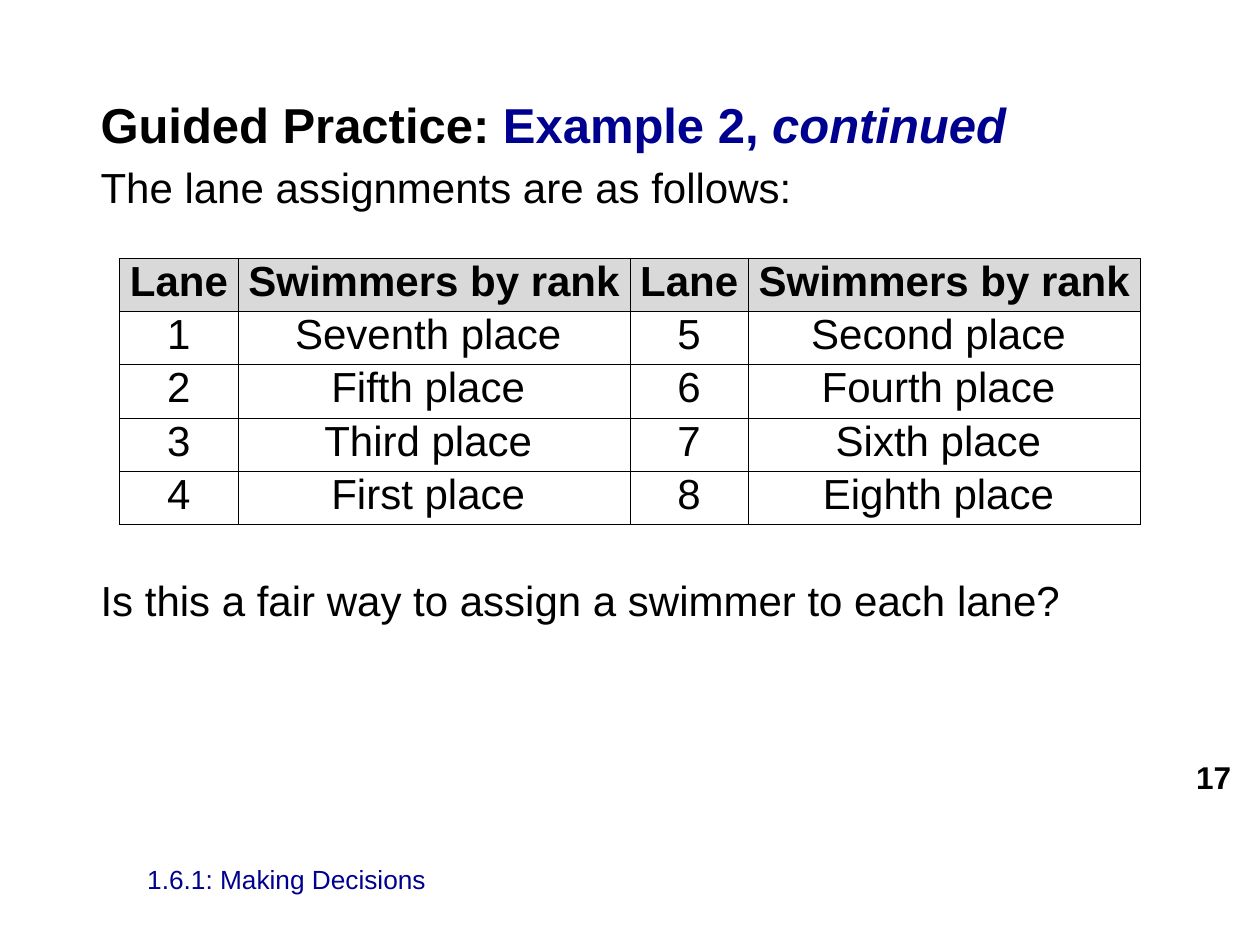
from typing import NamedTuple

from lxml.etree import SubElement
from pptx import Presentation
from pptx.dml.color import RGBColor
from pptx.enum.text import MSO_ANCHOR as Anchor, PP_ALIGN as Align
from pptx.oxml.ns import qn
from pptx.util import Inches, Pt

BLACK = RGBColor(0x00, 0x00, 0x00)
NAVY = RGBColor(0x00, 0x00, 0x90)
GRAY = RGBColor(0xD9, 0xD9, 0xD9)
WHITE = RGBColor(0xFF, 0xFF, 0xFF)
FONT = "Arial"


class Label(NamedTuple):
    text: str
    left: float
    top: float
    width: float
    height: float
    size: int
    color: RGBColor
    bold: bool
    align: Align


class BodyLine(NamedTuple):
    text: str
    space_before: float


LABELS = [
    Label("17", 9.07, 6.01, 0.8, 0.31, 18, BLACK, True, Align.RIGHT),
    Label("1.6.1: Making Decisions", 1.07, 6.83, 6.28, 0.29, 15, NAVY, False, Align.LEFT),
]
BODY_LINES = [
    BodyLine("The lane assignments are as follows:", 5),
    BodyLine("Is this a fair way to assign a swimmer to each lane?", 207),
]
HEADER = ["Lane", "Swimmers by rank"] * 2
PLACES = ["Seventh", "Fifth", "Third", "First", "Second", "Fourth", "Sixth", "Eighth"]
COLUMN_WIDTHS = [0.94, 3.11] * 2
ROW_HEIGHT = 0.39


def set_font(paragraph, size: int, color: RGBColor, bold: bool = False) -> None:
    font = paragraph.font
    font.name = FONT
    font.size = Pt(size)
    font.bold = bold
    font.color.rgb = color


def add_text_frame(slide, left: float, top: float, width: float, height: float):
    box = slide.shapes.add_textbox(Inches(left), Inches(top), Inches(width), Inches(height))
    box.text_frame.word_wrap = True
    return box.text_frame


def add_label(slide, label: Label) -> None:
    frame = add_text_frame(slide, label.left, label.top, label.width, label.height)
    frame.vertical_anchor = Anchor.MIDDLE
    paragraph = frame.paragraphs[0]
    paragraph.text = label.text
    paragraph.alignment = label.align
    set_font(paragraph, label.size, label.color, label.bold)


def add_body(slide) -> None:
    frame = add_text_frame(slide, 0.7, 0.7, 8.56, 5.47)
    title = frame.paragraphs[0]
    set_font(title, 28, BLACK, True)
    title.add_run().text = "Guided Practice: "
    for text, italic in [("Example 2, ", False), ("continued", True)]:
        run = title.add_run()
        run.text = text
        run.font.color.rgb = NAVY
        run.font.italic = italic
    for line in BODY_LINES:
        paragraph = frame.add_paragraph()
        paragraph.text = line.text
        paragraph.space_before = Pt(line.space_before)
        set_font(paragraph, 24, BLACK)


def add_borders(cell) -> None:
    properties = cell._tc.get_or_add_tcPr()
    for index, side in enumerate(["lnL", "lnR", "lnT", "lnB"]):
        line = properties.makeelement(qn(f"a:{side}"), {"w": str(Pt(0.5))})
        fill = SubElement(line, qn("a:solidFill"))
        SubElement(fill, qn("a:srgbClr"), val=str(BLACK))
        properties.insert(index, line)


def fill_cell(cell, text: str, is_header: bool) -> None:
    cell.margin_left = cell.margin_right = Inches(0.01)
    cell.margin_top = 0
    cell.margin_bottom = Inches(0.05)
    cell.vertical_anchor = Anchor.BOTTOM
    cell.fill.solid()
    cell.fill.fore_color.rgb = GRAY if is_header else WHITE
    add_borders(cell)
    paragraph = cell.text_frame.paragraphs[0]
    paragraph.text = text
    paragraph.alignment = Align.CENTER
    paragraph.line_spacing = 0.93
    set_font(paragraph, 24, BLACK, is_header)


def add_lane_table(slide) -> None:
    half = len(PLACES) // 2
    rows = [HEADER]
    for index in range(half):
        lanes = (index, index + half)
        rows.append([text for lane in lanes for text in (str(lane + 1), f"{PLACES[lane]} place ")])
    table = slide.shapes.add_table(
        len(rows), len(HEADER), Inches(0.95), Inches(2.05),
        Inches(sum(COLUMN_WIDTHS)), Inches(ROW_HEIGHT * len(rows)),
    ).table
    for column, width in zip(table.columns, COLUMN_WIDTHS):
        column.width = Inches(width)
    for row_index, texts in enumerate(rows):
        for column_index, text in enumerate(texts):
            fill_cell(table.cell(row_index, column_index), text, row_index == 0)


def main() -> None:
    presentation = Presentation()
    presentation.slide_width = Inches(10)
    presentation.slide_height = Inches(7.5)
    slide = presentation.slides.add_slide(presentation.slide_layouts[6])
    add_body(slide)
    for label in LABELS:
        add_label(slide, label)
    add_lane_table(slide)
    presentation.save("out.pptx")


if __name__ == "__main__":
    main()
